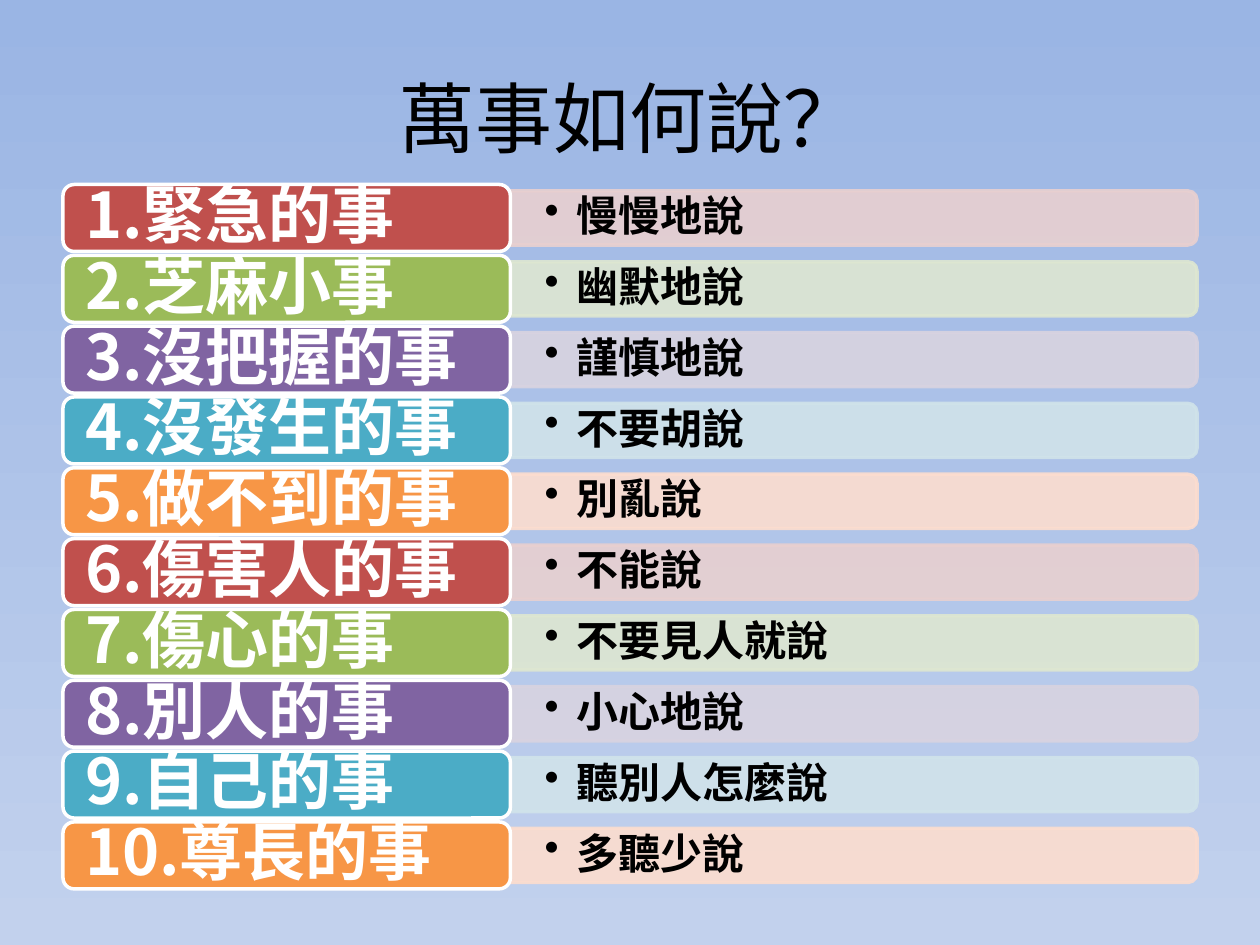
from lxml.etree import SubElement
from pptx import Presentation
from pptx.dml.color import RGBColor
from pptx.enum.shapes import MSO_SHAPE
from pptx.enum.text import MSO_ANCHOR, PP_ALIGN
from pptx.oxml.ns import qn
from pptx.util import Cm, Pt

COLORS = {
    "black": "000000", "white": "FFFFFF", "sky top": "9AB5E4", "sky bottom": "C2D1ED",
    "red": "C0504D", "green": "9BBB59", "purple": "8064A2", "blue": "4BACC6", "orange": "F79646",
    "pale red": "E8D0D0", "pale green": "DEE7D1", "pale purple": "D8D3E0",
    "pale blue": "D0E3EA", "pale orange": "FCDDCF",
}
ROW_COLORS = ["red", "green", "purple", "blue", "orange"]
ADVICE = [
    ("緊急的事", "慢慢地說"), ("芝麻小事", "幽默地說"), ("沒把握的事", "謹慎地說"),
    ("沒發生的事", "不要胡說"), ("做不到的事", "別亂說"), ("傷害人的事", "不能說"),
    ("傷心的事", "不要見人就說"), ("別人的事", "小心地說"), ("自己的事", "聽別人怎麼說"),
    ("尊長的事", "多聽少說"),
]
LEFT, FIRST_TOP, LAST_TOP = 1.27, 3.72, 16.57
TOPIC_WIDTH, TOPIC_HEIGHT = 9.02, 1.35
BAR_LENGTH, BAR_HEIGHT = 13.84, 1.09


class AdviceSlide:
    """Holds the slide and its style, and draws each kind of element."""

    def __init__(self, slide, font="Noto Sans CJK SC"):
        self.slide = slide
        self.font = font

    def color(self, name):
        return RGBColor.from_string(COLORS[name])

    def background(self, top, bottom):
        fill = self.slide.background.fill
        fill.gradient()
        fill.gradient_angle = 270
        for stop, name in zip(fill.gradient_stops, (top, bottom)):
            stop.color.rgb = self.color(name)

    def fill_text(self, shape, text, size, color, bold=False, align=PP_ALIGN.LEFT,
                  margins=(0.25, 0.13), spacing=1.0, bullet=False):
        frame = shape.text_frame
        frame.word_wrap = True
        frame.vertical_anchor = MSO_ANCHOR.MIDDLE
        frame.margin_left = frame.margin_right = Cm(margins[0])
        frame.margin_top = frame.margin_bottom = Cm(margins[1])
        paragraph = frame.paragraphs[0]
        paragraph.text = text
        paragraph.alignment = align
        paragraph.line_spacing = spacing
        properties = paragraph._p.get_or_add_pPr()
        if bullet:
            properties.set("marL", str(Cm(0.64)))
            properties.set("indent", str(Cm(-0.64)))
            SubElement(properties, qn("a:buChar"), char="•")
        paragraph.font.size = Pt(size)
        paragraph.font.bold = bold
        paragraph.font.color.rgb = self.color(color)
        paragraph.font.name = self.font
        SubElement(properties.find(qn("a:defRPr")), qn("a:ea"), typeface=self.font)

    def text(self, left, top, width, height, *content, **style):
        box = self.slide.shapes.add_textbox(Cm(left), Cm(top), Cm(width), Cm(height))
        self.fill_text(box, *content, **style)

    def shape(self, kind, left, top, width, height, fill, line):
        shape = self.slide.shapes.add_shape(kind, Cm(left), Cm(top), Cm(width), Cm(height))
        shape.shadow.inherit = False
        shape.fill.solid()
        shape.fill.fore_color.rgb = self.color(fill)
        shape.line.color.rgb = self.color(line)
        shape.line.width = Pt(2)
        return shape

    def bar(self, left, middle, color, text):
        shape = self.shape(MSO_SHAPE.ROUND_2_SAME_RECTANGLE,
                           left + (BAR_LENGTH - BAR_HEIGHT) / 2, middle - BAR_LENGTH / 2,
                           BAR_HEIGHT, BAR_LENGTH, color, color)
        shape.rotation = 90
        for element in shape._element.spPr.iter(qn("a:srgbClr")):
            SubElement(element, qn("a:alpha"), val="90000")
        self.text(left, middle - 0.5, BAR_LENGTH, 1, text, 24, "black",
                  bold=True, margins=(0.69, 0.36), spacing=0.9, bullet=True)

    def topic(self, top, color, text):
        shape = self.shape(MSO_SHAPE.ROUNDED_RECTANGLE, LEFT, top,
                           TOPIC_WIDTH, TOPIC_HEIGHT, color, "white")
        self.fill_text(shape, text, 36, "white", bold=True, margins=(0.38, 0.18), spacing=0.9)


def main():
    presentation = Presentation()
    presentation.slide_width, presentation.slide_height = Cm(25.4), Cm(19.05)
    advice = AdviceSlide(presentation.slides.add_slide(presentation.slide_layouts[6]))
    advice.background("sky top", "sky bottom")
    advice.text(LEFT, 0.76, 22.86, 3.18, "萬事如何說？", 44, "black", align=PP_ALIGN.CENTER)
    pitch = (LAST_TOP - FIRST_TOP) / (len(ADVICE) - 1)
    for index, (topic, manner) in enumerate(ADVICE):
        top = FIRST_TOP + index * pitch
        color = ROW_COLORS[index % len(ROW_COLORS)]
        advice.bar(LEFT + TOPIC_WIDTH, top + TOPIC_HEIGHT / 2, f"pale {color}", manner)
        advice.topic(top, color, f"{index + 1}.{topic}")
    presentation.save("out.pptx")


if __name__ == "__main__":
    main()
